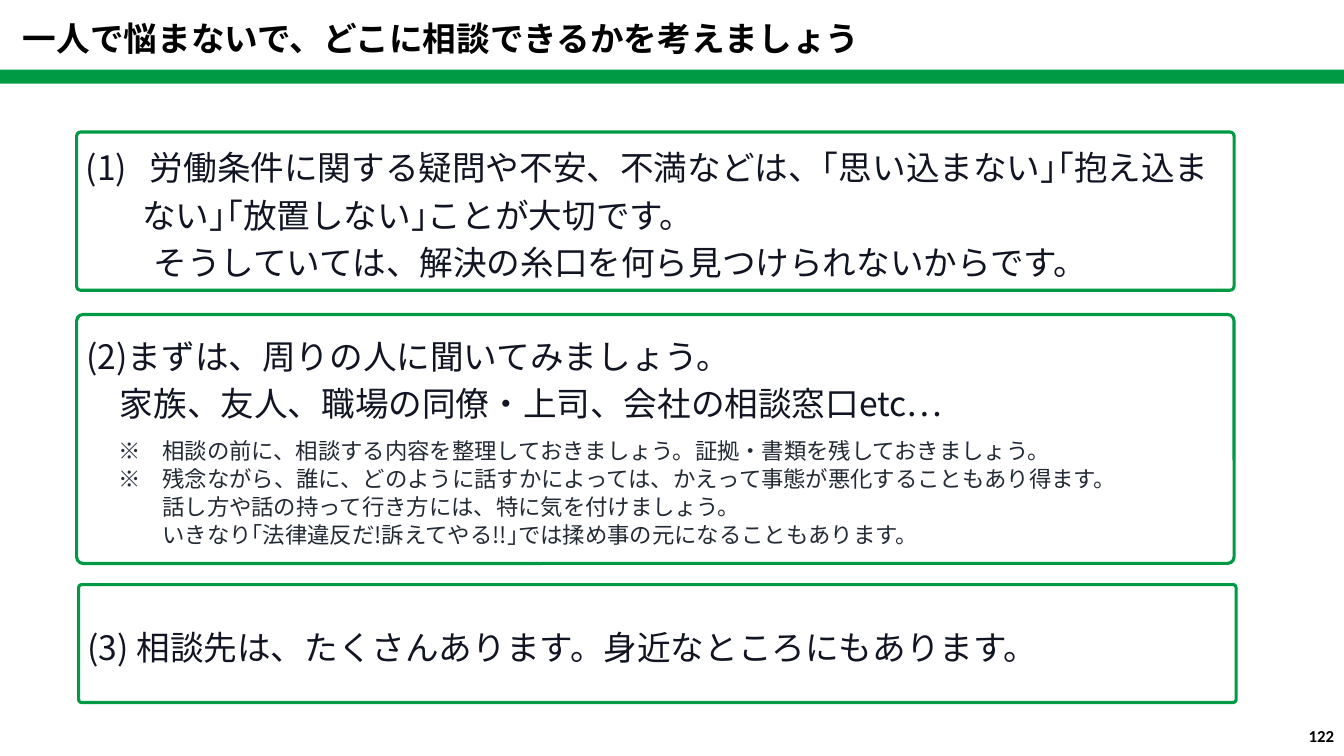
"""Build the slide on where to turn for advice about work troubles."""
from dataclasses import dataclass
from typing import Any

from pptx import Presentation
from pptx.dml import color
from pptx.enum import lang, shapes, text
from pptx.oxml import ns, xmlchemy
from pptx.util import Inches, Pt

JP = "Noto Sans CJK JP"
GREEN, WHITE, INK, GREY, BLACK = "009944", "FFFFFF", "111422", "222A35", "000000"
MIDDLE, TOP = text.MSO_ANCHOR.MIDDLE, text.MSO_ANCHOR.TOP


@dataclass
class Line:
    text: str
    left: float = 0
    first: float = 0
    numbered: bool = False


@dataclass
class Panel:
    x: float
    y: float
    w: float
    h: float
    lines: list[Line]
    anchor: Any = MIDDLE
    inset: float = 0.04
    framed: bool = True
    size: float = 24
    spacing: float = 34
    ink: str = INK


PANELS = [
    Panel(0.78, 5.8, 11.48, 1.17, [
        Line("(3) 相談先は、たくさんあります。身近なところにもあります。"),
    ]),
    Panel(0.76, 3.12, 11.48, 2.47, [
        Line("(2)まずは、周りの人に聞いてみましょう。"),
        Line("家族、友人、職場の同僚・上司、会社の相談窓口etc…", left=0.33),
    ], anchor=TOP, inset=0.12),
    Panel(0.76, 1.31, 11.48, 1.57, [
        Line(" 労働条件に関する疑問や不安、不満などは、｢思い込まない｣｢抱え込まない｣"
             "｢放置しない｣ことが大切です。", left=0.56, first=-0.56, numbered=True),
        Line("そうしていては、解決の糸口を何ら見つけられないからです。", left=0.67),
    ]),
    Panel(1.08, 4.18, 11.02, 1.41, [
        Line("※　相談の前に、相談する内容を整理しておきましょう。証拠・書類を残しておきましょう。"),
        Line("※　残念ながら、誰に、どのように話すかによっては、かえって事態が悪化することもあり得ます。"),
        Line("話し方や話の持って行き方には、特に気を付けましょう。", left=0.44),
        Line("いきなり｢法律違反だ!訴えてやる!!｣では揉め事の元になることもあります。", left=0.44),
    ], framed=False, size=16, spacing=20, ink=GREY),
]


def rgb(value: str) -> color.RGBColor:
    """Turn a hex string into a colour."""
    return color.RGBColor.from_string(value)


def write(p: Any, content: str, *, size: float = 24, ink: str = BLACK,
          font: str = JP, bold: bool = False, align: Any = text.PP_ALIGN.LEFT) -> None:
    """Put one formatted run into a paragraph."""
    p.alignment = align
    r = p.add_run()
    r.text = content
    r.font.size, r.font.bold, r.font.name = Pt(size), bold, font
    r.font.color.rgb = rgb(ink)
    r.font.language_id = lang.MSO_LANGUAGE_ID.JAPANESE
    ea = xmlchemy.OxmlElement("a:ea")
    ea.set("typeface", font)
    r.font._element.find(ns.qn("a:latin")).addnext(ea)


def add_panel(s: Any, panel: Panel) -> None:
    """Draw a rounded panel with its lines of text."""
    sp = s.shapes.add_shape(shapes.MSO_SHAPE.ROUNDED_RECTANGLE, Inches(panel.x),
                            Inches(panel.y), Inches(panel.w), Inches(panel.h))
    sp.adjustments[0] = 0.026
    sp.shadow.inherit = False
    if panel.framed:
        sp.fill.solid()
        sp.fill.fore_color.rgb = rgb(WHITE)
        sp.line.color.rgb = rgb(GREEN)
        sp.line.width = Pt(2.25)
    else:
        sp.fill.background()
        sp.line.fill.background()
    tf = sp.text_frame
    tf.word_wrap, tf.vertical_anchor = True, panel.anchor
    tf.margin_left, tf.margin_top = Inches(0.08), Inches(panel.inset)
    tf.margin_right = tf.margin_bottom = Inches(0.04)
    for i, line in enumerate(panel.lines):
        p = tf.add_paragraph() if i else tf.paragraphs[0]
        p.line_spacing = Pt(panel.spacing)
        pPr = p._p.get_or_add_pPr()
        pPr.set("marL", str(Inches(line.left)))
        pPr.set("indent", str(Inches(line.first)))
        if line.numbered:
            bullet = xmlchemy.OxmlElement("a:buAutoNum")
            bullet.set("type", "arabicParenBoth")
            pPr.append(bullet)
        write(p, line.text, size=panel.size, ink=panel.ink)


def add_label(s: Any, x: float, y: float, w: float, h: float, content: str,
              anchor: Any = TOP, **fmt: Any) -> None:
    """Add a bold text box."""
    tf = s.shapes.add_textbox(Inches(x), Inches(y), Inches(w), Inches(h)).text_frame
    tf.word_wrap, tf.vertical_anchor = True, anchor
    write(tf.paragraphs[0], content, bold=True, **fmt)


def main() -> None:
    """Create and save the presentation."""
    prs = Presentation()
    prs.slide_width, prs.slide_height = Inches(13.33), Inches(7.5)
    s = prs.slides.add_slide(prs.slide_layouts[6])
    for panel in PANELS:
        add_panel(s, panel)
    bar = s.shapes.add_shape(shapes.MSO_SHAPE.RECTANGLE, 0, Inches(0.69),
                             prs.slide_width, Inches(0.14))
    bar.shadow.inherit = False
    bar.fill.solid()
    bar.fill.fore_color.rgb = rgb(GREEN)
    bar.line.fill.background()
    add_label(s, 0.13, 0.13, 12.84, 0.5, "一人で悩まないで、どこに相談できるかを考えましょう")
    add_label(s, 10.22, 7.1, 3.11, 0.4, "122", MIDDLE, size=12, font="Calibri",
              align=text.PP_ALIGN.RIGHT)
    prs.save("out.pptx")


if __name__ == "__main__":
    main()
